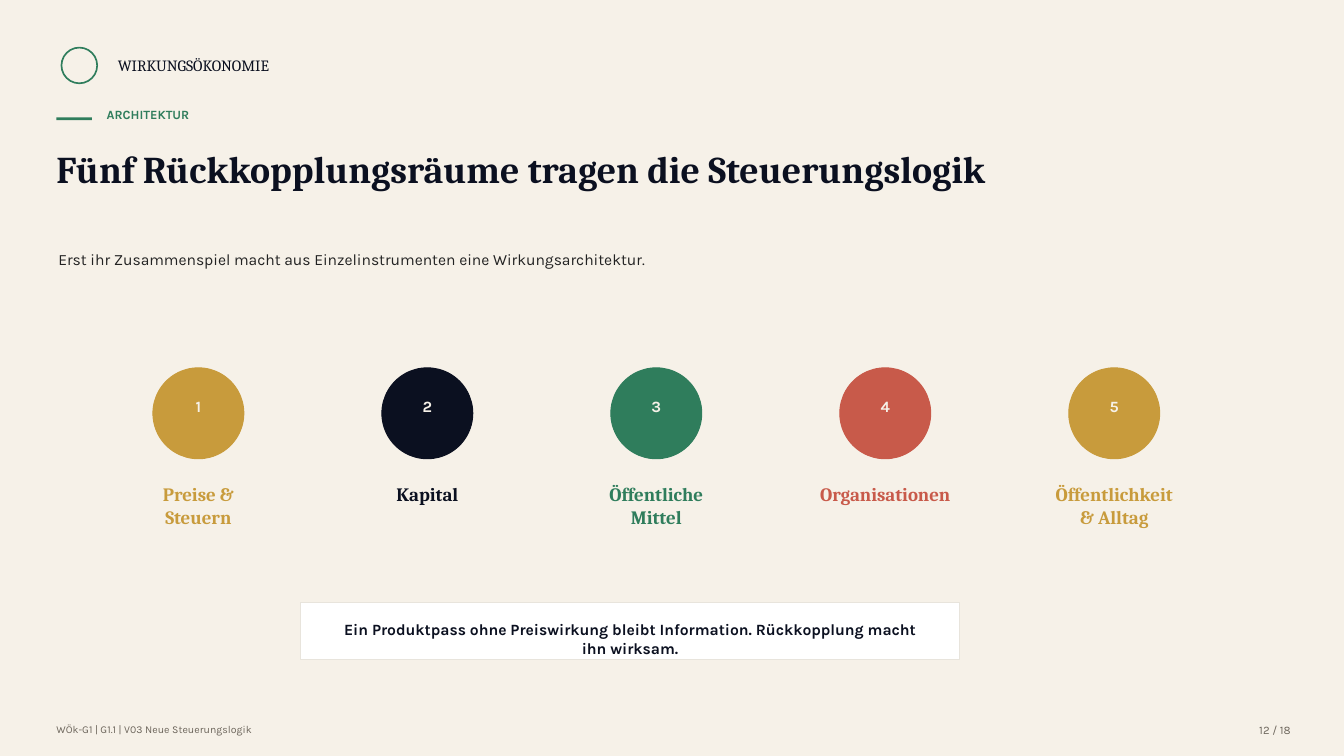
"""Builds the slide on the five feedback spaces of the impact economy."""
from dataclasses import dataclass

from pptx import Presentation
from pptx.dml.color import RGBColor
from pptx.enum import shapes, text
from pptx.util import Cm, Pt

HEADER = "WIRKUNGSÖKONOMIE"
SECTION = "ARCHITEKTUR"
TITLE = "Fünf Rückkopplungsräume tragen die Steuerungslogik"
LEAD = "Erst ihr Zusammenspiel macht aus Einzelinstrumenten eine Wirkungsarchitektur."
SPACES = [
    (["Preise &", "Steuern"], "gold"),
    (["Kapital"], "ink"),
    (["Öffentliche", "Mittel"], "green"),
    (["Organisationen"], "red"),
    (["Öffentlichkeit", "& Alltag"], "gold"),
]
CALLOUT = "Ein Produktpass ohne Preiswirkung bleibt Information. Rückkopplung macht ihn wirksam."
FOOTER = "WÖk-G1 | G1.1 | V03 Neue Steuerungslogik"
PAGE = "12 / 18"


@dataclass(frozen=True)
class Theme:
    serif: str = "Cambria"
    sans: str = "Karla"
    paper: str = "F6F1E8"
    white: str = "FFFFFF"
    border: str = "E8E4DC"
    ink: str = "0B1020"
    green: str = "2F7D5C"
    gold: str = "C89B3C"
    red: str = "C85A4A"
    body: str = "222222"
    muted: str = "6C655B"
    title_size: float = 27
    label_size: float = 13.5
    text_size: float = 11.2
    section_size: float = 9
    page_size: float = 8.2
    footer_size: float = 7.5


T = Theme()
ALIGN = text.PP_ALIGN
SHAPE = shapes.MSO_SHAPE
MARGIN = 1.42
FIRST_CENTRE, PITCH = 5.0, 5.77
DIAMETER, LABEL_WIDTH = 2.29, 5.23


def place(sp, box):
    sp.left, sp.top, sp.width, sp.height = (Cm(v) for v in box)


def write(sp, lines, font, size, color, bold=False, align=ALIGN.LEFT):
    tf = sp.text_frame
    tf.word_wrap = True
    tf.auto_size = text.MSO_AUTO_SIZE.NONE
    tf.vertical_anchor = text.MSO_ANCHOR.TOP
    tf.margin_left = tf.margin_top = tf.margin_right = tf.margin_bottom = 0
    for i, line in enumerate(lines):
        p = tf.add_paragraph() if i else tf.paragraphs[0]
        p.alignment = align
        r = p.add_run()
        r.text = line
        r.font.name, r.font.size, r.font.bold = font, Pt(size), bold
        r.font.color.rgb = RGBColor.from_string(color)


def add_text(s, box, lines, *style, **options):
    sp = s.shapes.add_textbox(*(Cm(v) for v in box))
    write(sp, lines, *style, **options)


def add_shape(s, kind, box, fill=None, line=None, width=0.75):
    sp = s.shapes.add_shape(kind, *(Cm(v) for v in box))
    sp.shadow.inherit = False
    if fill:
        sp.fill.solid()
        sp.fill.fore_color.rgb = RGBColor.from_string(fill)
    else:
        sp.fill.background()
    if line:
        sp.line.color.rgb = RGBColor.from_string(line)
        sp.line.width = Pt(width)
    else:
        sp.line.fill.background()


def add_heading(s):
    add_shape(s, SHAPE.OVAL, (1.55, 1.2, 0.9, 0.9), line=T.green, width=1.2)
    add_text(s, (2.97, 1.4, 6.6, 0.58), [HEADER], T.serif, T.text_size, T.ink)
    add_shape(s, SHAPE.RECTANGLE, (MARGIN, 2.96, 0.9, 0.07), fill=T.green)
    add_text(s, (2.69, 2.69, 12.17, 0.64), [SECTION],
             T.sans, T.section_size, T.green, bold=True)
    title = s.shapes.title
    place(title, (MARGIN, 3.66, 24.61, 2.39))
    write(title, [TITLE], T.serif, T.title_size, T.ink, bold=True)
    add_text(s, (1.47, 6.3, 22.23, 1.12), [LEAD], T.sans, T.text_size, T.body)


def add_spaces(s):
    for i, (label, color_name) in enumerate(SPACES):
        centre = FIRST_CENTRE + i * PITCH
        color = getattr(T, color_name)
        left = centre - DIAMETER / 2
        add_shape(s, SHAPE.OVAL, (left, 9.27, DIAMETER, DIAMETER), color, color)
        add_text(s, (left, 10.01, DIAMETER, 0.48), [str(i + 1)],
                 T.sans, T.text_size, T.paper, bold=True, align=ALIGN.CENTER)
        add_text(s, (centre - LABEL_WIDTH / 2, 12.17, LABEL_WIDTH, 1.27), label,
                 T.serif, T.label_size, color, bold=True, align=ALIGN.CENTER)


def add_closing(s):
    add_shape(s, SHAPE.RECTANGLE, (7.57, 15.19, 16.61, 1.42), T.white, T.border)
    add_text(s, (8.36, 15.62, 15.04, 0.58), [CALLOUT],
             T.sans, T.text_size, T.ink, bold=True, align=ALIGN.CENTER)
    add_text(s, (MARGIN, 18.21, 14.81, 0.48), [FOOTER],
             T.sans, T.footer_size, T.muted)
    add_text(s, (30.68, 18.21, 1.85, 0.48), [PAGE],
             T.sans, T.page_size, T.muted, align=ALIGN.RIGHT)


def main():
    prs = Presentation()
    prs.slide_width, prs.slide_height = Cm(33.87), Cm(19.05)
    s = prs.slides.add_slide(prs.slide_layouts.get_by_name("Title Only"))
    s.background.fill.solid()
    s.background.fill.fore_color.rgb = RGBColor.from_string(T.paper)
    add_heading(s)
    add_spaces(s)
    add_closing(s)
    prs.save("out.pptx")


if __name__ == "__main__":
    main()
